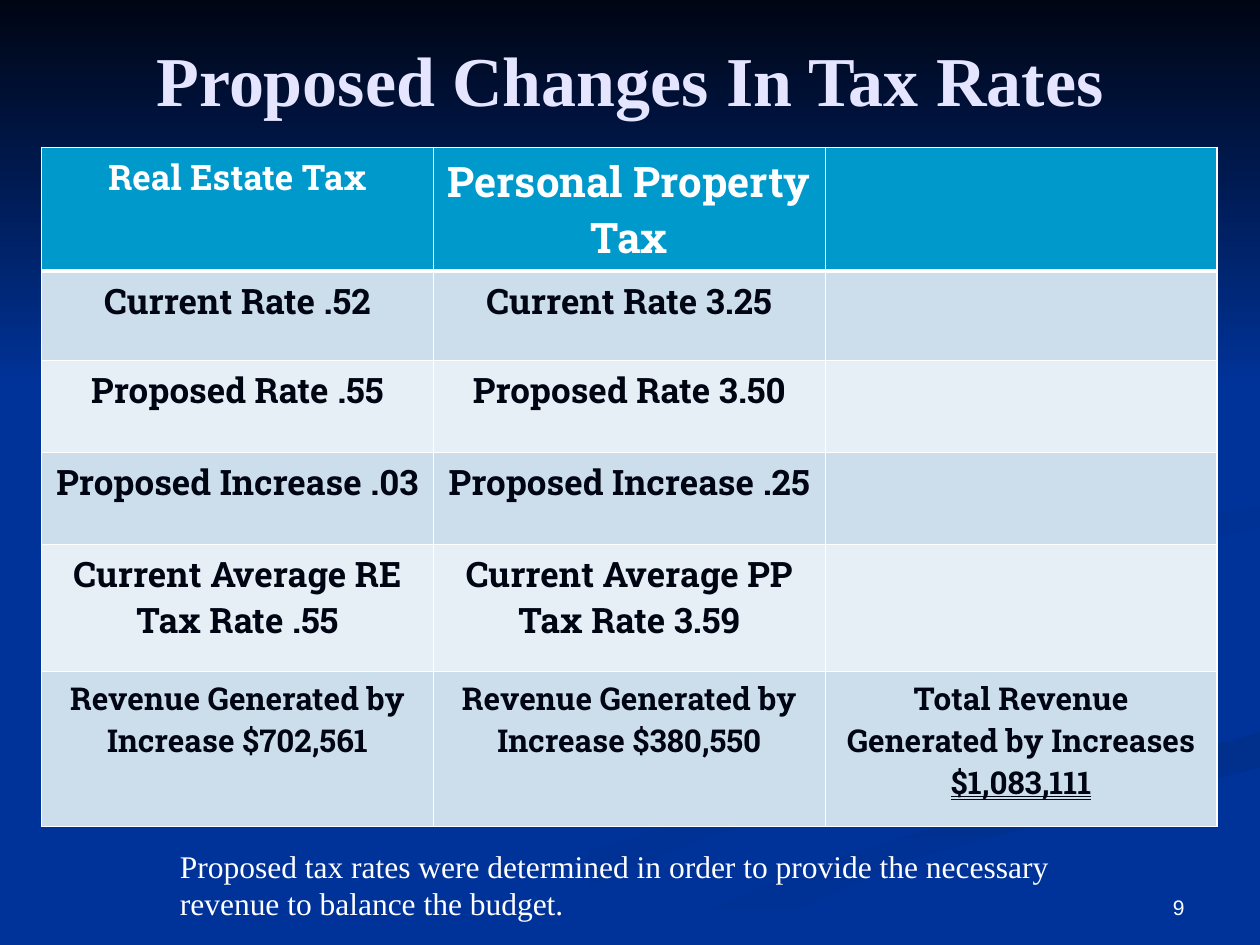
from lxml.etree import SubElement
from pptx import Presentation
from pptx.dml.color import RGBColor
from pptx.enum.text import MSO_ANCHOR as Anchor, MSO_UNDERLINE as Underline, PP_ALIGN as Align
from pptx.oxml.ns import qn
from pptx.util import Inches, Pt

COLORS = {
    "night": "000514", "blue": "003399", "white": "FFFFFF", "lilac": "E5E5FF",
    "header": "0099CC", "band": "CCDEEC", "pale": "E7EFF6",
    "shade": "003193", "deep": "002F8C", "dusk": "003091",
}
WIDTH, HEIGHT = 10, 7.5

TITLE = "Proposed Changes In Tax Rates"
NOTE = ("Proposed tax rates were determined in order to provide the necessary "
        "revenue to balance the budget.")
PAGE = "9"
RATES = [
    ["Real Estate Tax", "Personal Property Tax", ""],
    ["Current Rate .52", "Current Rate 3.25", ""],
    ["Proposed Rate .55", "Proposed Rate 3.50", ""],
    ["Proposed Increase .03", "Proposed Increase .25", ""],
    ["Current Average RE Tax Rate .55", "Current Average PP Tax Rate 3.59", ""],
    ["Revenue Generated by Increase $702,561", "Revenue Generated by Increase $380,550",
     "Total Revenue Generated by Increases "],
]
TOTAL = "$1,083,111"
ROW_HEIGHTS = [0.85, 0.71, 0.73, 0.73, 1.01, 1.23]
TABLE_LEFT, TABLE_TOP, COLUMN = 0.33, 1.17, 3.11

SERIF, SLAB, SANS = "Times New Roman", "Roboto Slab", "Arial"
TEXTS = [
    (TITLE, (0.5, 0, 9, 1.25), Align.CENTER, Anchor.MIDDLE, "lilac",
     {"name": SERIF, "size": Pt(40), "bold": True}),
    (PAGE, (7.17, 6.83, 2.33, 0.52), Align.RIGHT, Anchor.BOTTOM, "white",
     {"name": SANS, "size": Pt(12)}),
    (NOTE, (1.33, 6.67, 7.67, 0.71), Align.LEFT, Anchor.TOP, "white",
     {"name": SERIF, "size": Pt(18)}),
]

SWIRLS = [
    ("blue", "shade", 0, [(3, HEIGHT), (4.2, 6.9), (5.8, 6.4), (7.8, 5.8), (8, 5.9),
                          (5.6, 6.65), (3.6, HEIGHT)]),
    ("deep", "blue", 90, [(5, HEIGHT), (6.3, 6.93), (8, 6.38), (WIDTH, 5.81),
                          (WIDTH, 6.09), (7.2, 6.82), (5.7, HEIGHT)]),
    ("dusk", "blue", 45, [(7.8, 4.6), (8.5, 4.27), (WIDTH, 4.02), (WIDTH, 4.2),
                          (8.4, 4.48), (8.2, 4.96)]),
    ("night", "blue", 90, [(0, 0), (0, 3.08), (WIDTH, 3.08), (WIDTH, 0)]),
]


def rgb(color):
    return RGBColor.from_string(COLORS[color])


def draw_swirl(slide, start, end, angle, points):
    corners = [(Inches(x), Inches(y)) for x, y in points]
    builder = slide.shapes.build_freeform(*corners[0])
    builder.add_line_segments(corners[1:], close=True)
    swirl = builder.convert_to_shape()
    swirl.shadow.inherit = False
    swirl.line.fill.background()
    swirl.fill.gradient()
    swirl.fill.gradient_angle = -angle % 360
    for stop, color in zip(swirl.fill.gradient_stops, (start, end)):
        stop.color.rgb = rgb(color)


def write(paragraph, words, color, style):
    run = paragraph.add_run()
    run.text = words
    run.font.color.rgb = rgb(color)
    for attribute, value in style.items():
        setattr(run.font, attribute, value)


def add_text(slide, words, place, align, anchor, color, style):
    frame = slide.shapes.add_textbox(*map(Inches, place)).text_frame
    frame.word_wrap = True
    frame.vertical_anchor = anchor
    frame.paragraphs[0].alignment = align
    write(frame.paragraphs[0], words, color, style)


def set_borders(cell, widths):
    properties = cell._tc.get_or_add_tcPr()
    for index, (side, width) in enumerate(widths.items()):
        line = SubElement(properties, qn(f"a:{side}"), w=str(Pt(width)))
        fill = SubElement(line, qn("a:solidFill"))
        SubElement(fill, qn("a:srgbClr"), val=COLORS["white"])
        properties.remove(line)
        properties.insert(index, line)


def add_rates(slide):
    last = len(RATES) - 1
    table = slide.shapes.add_table(
        len(RATES), len(RATES[0]), Inches(TABLE_LEFT), Inches(TABLE_TOP),
        Inches(COLUMN * len(RATES[0])), Inches(sum(ROW_HEIGHTS))).table
    for column in table.columns:
        column.width = Inches(COLUMN)
    for r, (row, height) in enumerate(zip(RATES, ROW_HEIGHTS)):
        table.rows[r].height = Inches(height)
        background = "header" if r == 0 else ("pale", "band")[r % 2]
        ink = "white" if r == 0 else "night"
        for c, words in enumerate(row):
            cell = table.cell(r, c)
            cell.fill.solid()
            cell.fill.fore_color.rgb = rgb(background)
            set_borders(cell, {"lnL": 1, "lnR": 1, "lnT": 3 if r == 1 else 1,
                               "lnB": 3 if r == 0 else 1})
            if not words:
                continue
            size = 18 if r == last else 24 if (r, c) == (0, 1) else 20
            style = {"name": SLAB, "size": Pt(size), "bold": True}
            paragraph = cell.text_frame.paragraphs[0]
            paragraph.alignment = Align.CENTER
            write(paragraph, words, ink, style)
            if (r, c) == (last, len(row) - 1):
                write(paragraph, TOTAL, ink, style | {"underline": Underline.DOUBLE_LINE})


def main():
    deck = Presentation()
    deck.slide_width, deck.slide_height = Inches(WIDTH), Inches(HEIGHT)
    slide = deck.slides.add_slide(deck.slide_layouts[6])
    slide.background.fill.solid()
    slide.background.fill.fore_color.rgb = rgb("blue")
    for swirl in SWIRLS:
        draw_swirl(slide, *swirl)
    add_rates(slide)
    for text in TEXTS:
        add_text(slide, *text)
    deck.save("out.pptx")


if __name__ == "__main__":
    main()
